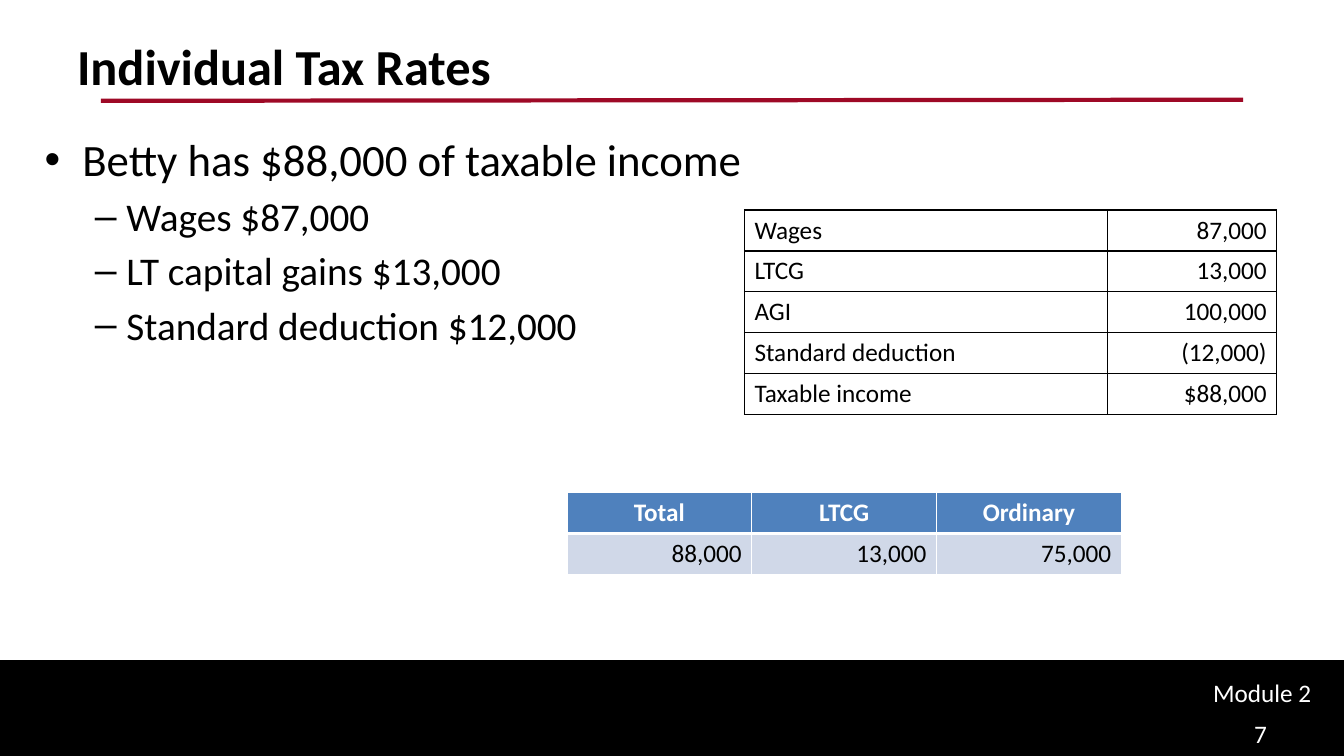
from dataclasses import dataclass

from lxml.etree import SubElement
from pptx import Presentation
from pptx.dml.color import RGBColor
from pptx.enum.shapes import MSO_CONNECTOR, MSO_SHAPE
from pptx.enum.text import MSO_ANCHOR, PP_ALIGN
from pptx.oxml.ns import qn
from pptx.util import Emu, Pt

BLACK = RGBColor(0x00, 0x00, 0x00)
WHITE = RGBColor(0xFF, 0xFF, 0xFF)
RED = RGBColor(0x9E, 0x09, 0x26)
BLUE = RGBColor(0x4F, 0x81, 0xBD)
PALE = RGBColor(0xD0, 0xD8, 0xE8)
FONT = "Calibri"
SCALE = 9525
ROW = 39


@dataclass(frozen=True)
class Point:
    text: str
    size: int
    mark: str
    left: int
    hang: int


@dataclass(frozen=True)
class Label:
    text: str
    box: tuple[int, int, int, int]
    size: int = 18
    color: RGBColor = WHITE
    bold: bool = False


@dataclass(frozen=True)
class Style:
    fill: RGBColor
    color: RGBColor
    edge: RGBColor
    aligns: tuple
    bold: bool = False
    base: int = 1
    anchor: MSO_ANCHOR = MSO_ANCHOR.TOP


@dataclass(frozen=True)
class Grid:
    left: int
    top: int
    widths: tuple[int, ...]
    rows: tuple[tuple[str, ...], ...]
    styles: tuple[Style, ...]


LABELS = (
    Label("Individual Tax Rates", (64, 29, 1152, 120), 36, BLACK, True),
    Label("Module 2", (1146, 640, 127, 39)),
    Label("7", (1185, 679, 87, 41)),
)

POINTS = (
    Point("Betty has $88,000 of taxable income", 32, "•", 36, 36),
    Point("Wages $87,000", 28, "–", 78, 30),
    Point("LT capital gains $13,000", 28, "–", 78, 30),
    Point("Standard deduction $12,000", 28, "–", 78, 30),
)

PLAIN = Style(WHITE, BLACK, BLACK, (PP_ALIGN.LEFT, PP_ALIGN.RIGHT))
HEAD = Style(BLUE, WHITE, WHITE, (PP_ALIGN.CENTER,) * 3, True, 3)
DATA = Style(PALE, BLACK, WHITE, (PP_ALIGN.RIGHT,) * 3,
             anchor=MSO_ANCHOR.BOTTOM)

GRIDS = (
    Grid(709, 200, (346, 161), (
        ("Wages", "87,000"),
        ("LTCG", "13,000"),
        ("AGI", "100,000"),
        ("Standard deduction", "(12,000)"),
        ("Taxable income", "$88,000"),
    ), (PLAIN,) * 5),
    Grid(540, 469, (176,) * 3, (
        ("Total", "LTCG", "Ordinary"),
        ("88,000", "13,000", "75,000"),
    ), (HEAD, DATA)),
)


def px(*vals: int) -> list[Emu]:
    return [Emu(val * SCALE) for val in vals]


def write(par, text: str, *, size: int = 18, color: RGBColor = BLACK,
          bold: bool = False, align=PP_ALIGN.LEFT) -> None:
    run = par.add_run()
    run.text = text
    par.alignment = align
    font = run.font
    font.name, font.size, font.bold = FONT, Pt(size), bold
    font.color.rgb = color


def add_frame(slide, box: tuple[int, int, int, int]):
    frame = slide.shapes.add_textbox(*px(*box)).text_frame
    frame.word_wrap = True
    return frame


def add_bar(slide) -> None:
    bar = slide.shapes.add_shape(MSO_SHAPE.RECTANGLE, *px(0, 630, 1280, 90))
    bar.shadow.inherit = False
    bar.fill.solid()
    bar.fill.fore_color.rgb = BLACK
    bar.line.color.rgb = BLACK
    bar.line.width = Pt(2)


def add_rule(slide) -> None:
    rule = slide.shapes.add_connector(
        MSO_CONNECTOR.STRAIGHT, *px(96, 96, 1184, 95))
    rule.line.color.rgb = RED
    rule.line.width = Pt(3)
    SubElement(rule._element.spPr, qn("a:effectLst"))


def add_points(slide, points: tuple[Point, ...]) -> None:
    frame = add_frame(slide, (33, 121, 1184, 459))
    for num, point in enumerate(points):
        par = frame.add_paragraph() if num else frame.paragraphs[0]
        props = par._p.get_or_add_pPr()
        left, hang = px(point.left, -point.hang)
        props.set("marL", str(left))
        props.set("indent", str(hang))
        SubElement(props, qn("a:buFont"), typeface="Arial")
        SubElement(props, qn("a:buChar"), char=point.mark)
        if num:
            par.space_before = Pt(5)
        write(par, point.text, size=point.size)


def add_edges(cell, style: Style) -> None:
    props = cell._tc.get_or_add_tcPr()
    for side in "LRTB":
        wide = Pt(style.base if side == "B" else 1)
        line = SubElement(props, qn(f"a:ln{side}"), w=str(wide))
        fill = SubElement(line, qn("a:solidFill"))
        SubElement(fill, qn("a:srgbClr"), val=str(style.edge))


def add_grid(slide, grid: Grid) -> None:
    size = px(grid.left, grid.top, sum(grid.widths), ROW * len(grid.rows))
    table = slide.shapes.add_table(
        len(grid.rows), len(grid.widths), *size).table
    table.first_row = table.horz_banding = False
    for col, width in zip(table.columns, px(*grid.widths)):
        col.width = width
    for row, texts, style in zip(table.rows, grid.rows, grid.styles):
        for cell, text, align in zip(row.cells, texts, style.aligns):
            add_edges(cell, style)
            cell.fill.solid()
            cell.fill.fore_color.rgb = style.fill
            cell.vertical_anchor = style.anchor
            write(cell.text_frame.paragraphs[0], text,
                  color=style.color, bold=style.bold, align=align)


def main() -> None:
    deck = Presentation()
    deck.slide_width, deck.slide_height = px(1280, 720)
    slide = deck.slides.add_slide(deck.slide_layouts[6])
    add_bar(slide)
    add_rule(slide)
    add_points(slide, POINTS)
    for label in LABELS:
        frame = add_frame(slide, label.box)
        write(frame.paragraphs[0], label.text, size=label.size,
              color=label.color, bold=label.bold)
    for grid in GRIDS:
        add_grid(slide, grid)
    deck.save("out.pptx")


if __name__ == "__main__":
    main()
